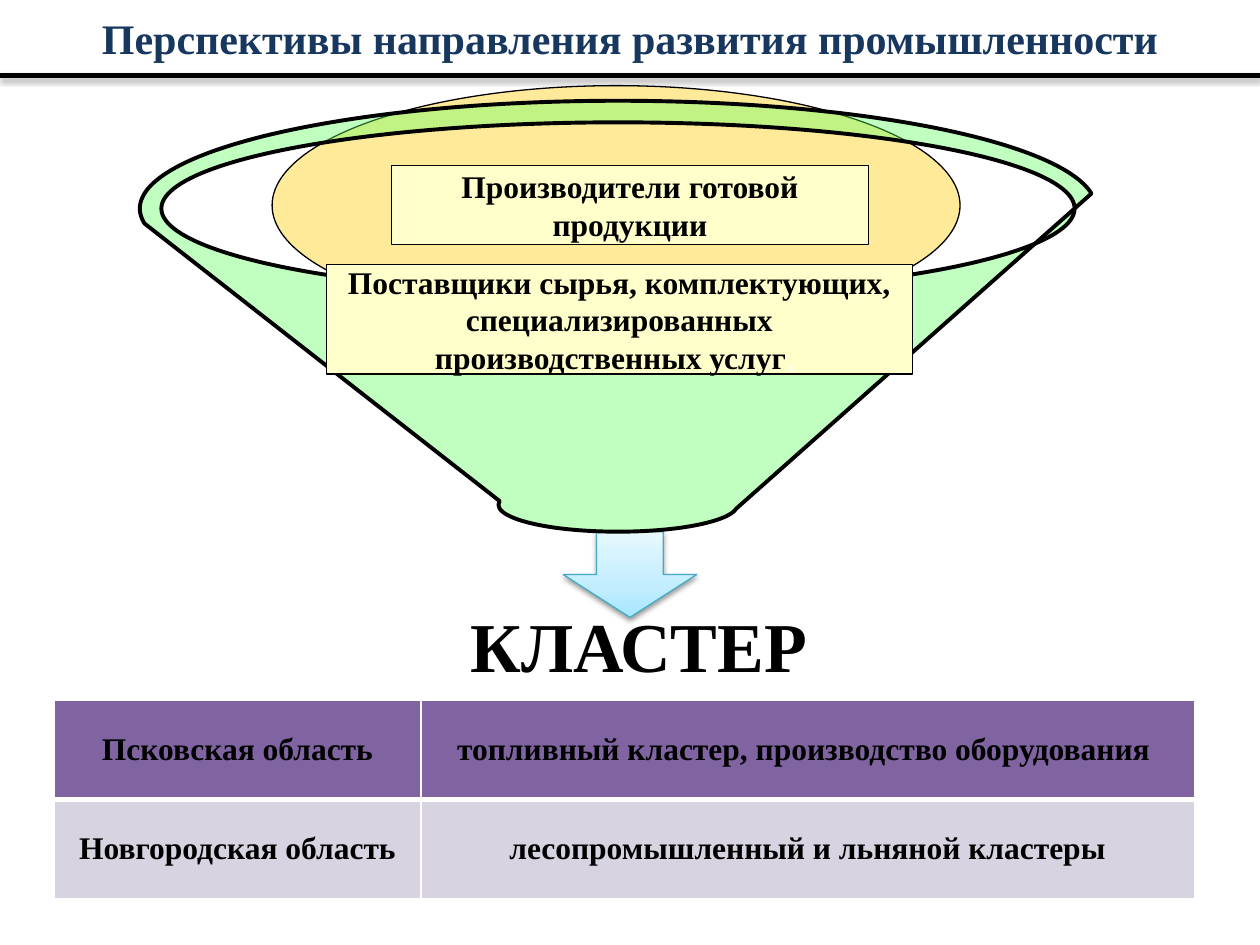
import pptx
import pptx.dml.color
import pptx.enum.shapes
import pptx.enum.text
import pptx.oxml
import pptx.oxml.ns
import pptx.util
from copy import deepcopy
from lxml import etree

RGBColor = pptx.dml.color.RGBColor
SHAPE = pptx.enum.shapes.MSO_SHAPE
NAVY = RGBColor(0x17, 0x37, 0x5E)
BLACK = RGBColor(0, 0, 0)
WHITE = RGBColor(0xFF, 0xFF, 0xFF)
GOLD = RGBColor(0xFF, 0xCC, 0x00)
GREEN = RGBColor(0x66, 0xFF, 0x66)
CREAM = RGBColor(0xFF, 0xFF, 0xCC)
TEAL = RGBColor(0x46, 0xAA, 0xC5)
PURPLE = RGBColor(0x80, 0x64, 0xA2)
LILAC = RGBColor(0xD8, 0xD3, 0xE0)
ARROW_STOPS = [(0, RGBColor(0xA7, 0xE6, 0xFF)), (0.35, RGBColor(0xC1, 0xED, 0xFF)),
               (1, RGBColor(0xE7, 0xF8, 0xFF))]
COLS, ROWS = 100, 75
WIDTH, HEIGHT = pptx.util.Inches(10), pptx.util.Inches(7.5)
ROWS_TEXT = [("Псковская область", "топливный кластер, производство оборудования "),
             ("Новгородская область", "лесопромышленный и льняной кластеры")]


def grid(col, row, cols, rows):
    """Turn grid columns and rows into slide lengths."""
    dx, dy = WIDTH / COLS, HEIGHT / ROWS
    return int(col * dx), int(row * dy), int(cols * dx), int(rows * dy)


def add_run(p, text, size=18, color=BLACK, font="Times New Roman", bold=True):
    """Append a formatted run to a paragraph."""
    r = p.add_run()
    r.text = text
    r.font.size = pptx.util.Pt(size)
    r.font.name = font
    r.font.bold = bold
    r.font.color.rgb = color


def write(tf, text, spacing=None, **fmt):
    """Write one centred paragraph and return it."""
    tf.word_wrap = True
    p = tf.paragraphs[0]
    p.alignment = pptx.enum.text.PP_ALIGN.CENTER
    if spacing:
        p.line_spacing = spacing
    add_run(p, text, **fmt)
    return p


def add_text(s, place, text, inset=0.1, **fmt):
    """Add a text box centred in both directions."""
    tf = s.shapes.add_textbox(*grid(*place)).text_frame
    tf.vertical_anchor = pptx.enum.text.MSO_ANCHOR.MIDDLE
    tf.margin_left = tf.margin_right = pptx.util.Inches(inset)
    write(tf, text, **fmt)


def add_shape(s, kind, place, fill=None, line=BLACK, width=0.75, alpha=None):
    """Add a preset shape with an optional solid, translucent fill."""
    sp = s.shapes.add_shape(kind, *grid(*place))
    sp.shadow.inherit = False
    sp.line.color.rgb = line
    sp.line.width = pptx.util.Pt(width)
    if fill is not None:
        sp.fill.solid()
        sp.fill.fore_color.rgb = fill
    if alpha:
        color = sp._element.spPr.find(".//" + pptx.oxml.ns.qn("a:srgbClr"))
        etree.SubElement(color, pptx.oxml.ns.qn("a:alpha"), val=str(alpha * 1000))
    return sp


def add_box(s, place, text, width):
    """Add a cream caption box and return its paragraph."""
    sp = add_shape(s, SHAPE.RECTANGLE, place, CREAM, width=width)
    sp.text_frame.vertical_anchor = pptx.enum.text.MSO_ANCHOR.MIDDLE
    return write(sp.text_frame, text)


def set_shadow(sp, alpha, distance):
    """Give an object a soft shadow falling straight down."""
    spPr = sp._element.spPr
    for old in spPr.findall(pptx.oxml.ns.qn("a:effectLst")):
        spPr.remove(old)
    spPr.append(pptx.oxml.parse_xml(
        f'<a:effectLst {pptx.oxml.ns.nsdecls("a")}><a:outerShdw blurRad="{pptx.util.Pt(3.1)}" '
        f'dist="{pptx.util.Pt(distance)}" dir="5400000" rotWithShape="0"><a:srgbClr val="000000">'
        f'<a:alpha val="{alpha * 1000}"/></a:srgbClr></a:outerShdw></a:effectLst>'))


def add_arrow(s, place):
    """Add the down arrow with its three-stop gradient."""
    sp = add_shape(s, SHAPE.DOWN_ARROW, place, line=TEAL)
    sp.fill.gradient()
    sp.fill.gradient_angle = 90
    stops = sp._element.spPr.find(".//" + pptx.oxml.ns.qn("a:gsLst"))
    stops.insert(1, deepcopy(stops[0]))
    for stop, (position, color) in zip(sp.fill.gradient_stops, ARROW_STOPS):
        stop.position = position
        stop.color.rgb = color
    set_shadow(sp, 38, 1.6)


def add_rule(s, row):
    """Add the heavy rule across the slide."""
    x, y, w, _ = grid(0, row, COLS, 0)
    cx = s.shapes.add_connector(pptx.enum.shapes.MSO_CONNECTOR.STRAIGHT, x, y, x + w, y)
    cx.line.color.rgb = BLACK
    cx.line.width = pptx.util.Pt(3)
    set_shadow(cx, 35, 1.8)


def set_borders(cell, **widths):
    """Draw white cell borders with the given widths in points."""
    tcPr = cell._tc.get_or_add_tcPr()
    for i, (side, width) in enumerate(widths.items()):
        tcPr.insert(i, pptx.oxml.parse_xml(
            f'<a:{side} {pptx.oxml.ns.nsdecls("a")} w="{pptx.util.Pt(width)}"><a:solidFill>'
            f'<a:srgbClr val="{WHITE}"/></a:solidFill></a:{side}>'))


def add_regions(s, place, widths):
    """Add the table of regions and their clusters."""
    table = s.shapes.add_table(len(ROWS_TEXT), len(widths), *grid(*place)).table
    for column, width in zip(table.columns, widths):
        column.width = grid(0, 0, width, 0)[2]
    for i, texts in enumerate(ROWS_TEXT):
        for j, text in enumerate(texts):
            cell = table.cell(i, j)
            cell.vertical_anchor = pptx.enum.text.MSO_ANCHOR.MIDDLE
            cell.fill.solid()
            cell.fill.fore_color.rgb = LILAC if i else PURPLE
            write(cell.text_frame, text)
            set_borders(cell, lnL=1, lnR=1, lnT=3 if i else 1, lnB=1 if i else 3)


def main():
    """Build the slide and save it."""
    prs = pptx.Presentation()
    prs.slide_width, prs.slide_height = WIDTH, HEIGHT
    s = prs.slides.add_slide(prs.slide_layouts[6])
    add_text(s, (0, 0, COLS, 6), "Перспективы направления развития промышленности",
             size=24, color=NAVY)
    add_shape(s, SHAPE.OVAL, (21.6, 6.8, 54.6, 19), GOLD, alpha=40)
    add_arrow(s, (44.7, 42.2, 10.6, 6.8))
    add_text(s, (32.5, 49.3, 36.4, 4.6), "КЛАСТЕР", inset=0.31, size=40, spacing=0.9)
    add_shape(s, SHAPE.FUNNEL, (11.1, 8, 75.9, 34.2), GREEN, width=2.25, alpha=40)
    add_rule(s, 6)
    add_box(s, (31.1, 13.1, 37.8, 6.3), "Производители готовой продукции", 0.5)
    p = add_box(s, (25.9, 21, 46.5, 8.7),
                "Поставщики сырья, комплектующих, специализированных производственных услуг", 0.75)
    add_run(p, ", ", color=WHITE, font="Arial", bold=False)
    add_regions(s, (4.3, 55.6, 90.5, 15.7), (29.1, 61.4))
    prs.save("out.pptx")


if __name__ == "__main__":
    main()
